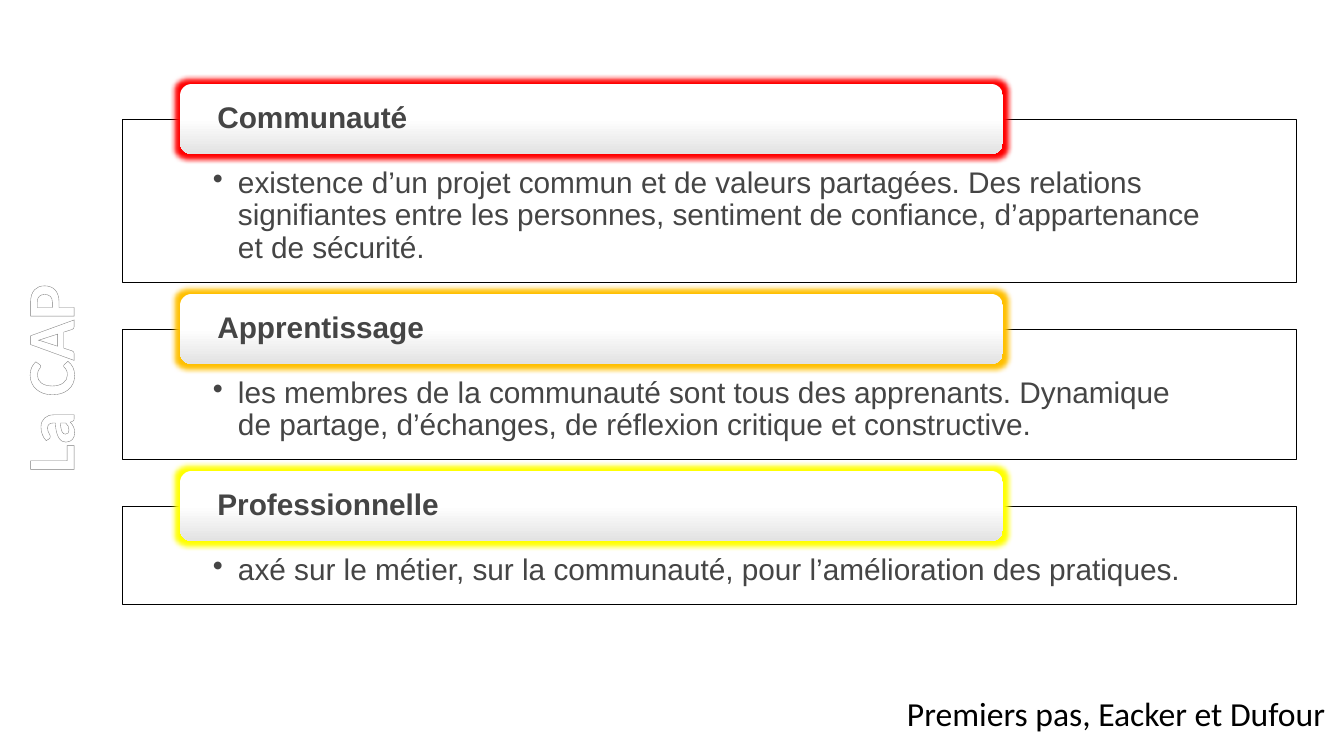
"""Build the slide on the three ideas behind a CAP."""
from lxml import etree
from pptx import Presentation
from pptx.dml.color import RGBColor
from pptx.enum.shapes import MSO_SHAPE
from pptx.enum.text import MSO_ANCHOR, MSO_AUTO_SIZE, PP_ALIGN
from pptx.oxml import parse_xml
from pptx.oxml.ns import qn
from pptx.util import Pt

RECTANGLE, ROUNDED = MSO_SHAPE.RECTANGLE, MSO_SHAPE.ROUNDED_RECTANGLE
TOP, MIDDLE = MSO_ANCHOR.TOP, MSO_ANCHOR.MIDDLE
LEFT, CENTER = PP_ALIGN.LEFT, PP_ALIGN.CENTER
GROW = MSO_AUTO_SIZE.SHAPE_TO_FIT_TEXT
NAMESPACE = "http://schemas.openxmlformats.org/drawingml/2006/main"
PX = 914400 / 100.8
COLORS = {
    "white": "FFFFFF", "black": "000000", "text": "454545", "shade": "E3E3E3",
    "gray": "7F7F7F", "outline": "7D7D7D",
    "red": "FF0000", "orange": "FFC000", "yellow": "FFFF00",
}
SECTIONS = [
    ("Communauté", "existence d’un projet commun et de valeurs partagées. Des relations "
     "signifiantes entre les personnes, sentiment de confiance, d’appartenance et de sécurité.",
     163, "red"),
    ("Apprentissage", "les membres de la communauté sont tous des apprenants. Dynamique "
     "de partage, d’échanges, de réflexion critique et constructive.", 130, "orange"),
    ("Professionnelle", "axé sur le métier, sur la communauté, pour l’amélioration des pratiques.",
     98, "yellow"),
]
FRAME_LEFT, FRAME_WIDTH, FRAME_GAP = 122, 1174, 47
TAB_LEFT, TAB_WIDTH, TAB_HEIGHT = 180, 823, 70


def apply_gradient(fill, parent, stops):
    """Give the parent element a vertical gradient."""
    fill.background()
    stop_xml = "".join(
        f'<a:gs pos="{position * 1000}"><a:srgbClr val="{COLORS[name]}"/></a:gs>'
        for position, name in stops)
    gradient = parse_xml(
        f'<a:gradFill xmlns:a="{NAMESPACE}" rotWithShape="1"><a:gsLst>{stop_xml}</a:gsLst>'
        '<a:lin ang="5400000" scaled="0"/></a:gradFill>')
    parent.replace(parent.find(qn("a:noFill")), gradient)


def write_text(shape, text, size, font_name, color, bold, alignment, anchor, insets):
    """Set the text of a shape and format its only run."""
    frame = shape.text_frame
    frame.text = text
    frame.word_wrap = True
    frame.vertical_anchor = anchor
    frame.margin_left = frame.margin_right = round(insets[0] * PX)
    frame.margin_top, frame.margin_bottom = (round(inset * PX) for inset in insets[1:])
    paragraph = frame.paragraphs[0]
    paragraph.alignment = alignment
    font = paragraph.runs[0].font
    font.size, font.name, font.bold = Pt(size), font_name, bold
    font.color.rgb = RGBColor.from_string(COLORS[color])
    return paragraph


presentation = Presentation()
presentation.slide_width, presentation.slide_height = round(1344 * PX), round(756 * PX)
slide = presentation.slides.add_slide(presentation.slide_layouts[5])

top = 119
for heading, description, height, glow_color in SECTIONS:
    box = slide.shapes.add_shape(
        RECTANGLE, *(round(length * PX) for length in (FRAME_LEFT, top, FRAME_WIDTH, height)))
    box.shadow.inherit = False
    box.fill.solid()
    box.fill.fore_color.rgb = RGBColor.from_string(COLORS["white"])
    box.line.color.rgb = RGBColor.from_string(COLORS["black"])
    box.line.width = Pt(0.5)
    paragraph = write_text(box, description, 21.3, "Arial", "text", False, LEFT, TOP, (91, 49, 17))
    paragraph.line_spacing = 0.9
    properties = paragraph._p.get_or_add_pPr()
    properties.set("marL", str(round(25 * PX)))
    properties.set("indent", str(round(-25 * PX)))
    etree.SubElement(properties, qn("a:buChar")).set("char", "•")

    tab = slide.shapes.add_shape(ROUNDED, *(
        round(length * PX) for length in (TAB_LEFT, top - TAB_HEIGHT // 2, TAB_WIDTH, TAB_HEIGHT)))
    tab.shadow.inherit = False
    tab.line.fill.background()
    shape_properties = tab._element.spPr
    apply_gradient(tab.fill, shape_properties, [(0, "white"), (50, "white"), (100, "shade")])
    glow = etree.SubElement(shape_properties.find(qn("a:effectLst")), qn("a:glow"))
    glow.set("rad", str(round(11 * PX)))
    etree.SubElement(glow, qn("a:srgbClr")).set("val", COLORS[glow_color])
    paragraph = write_text(tab, heading, 21.3, "Arial", "text", True, LEFT, MIDDLE, (34, 3, 3))
    paragraph.line_spacing = 0.9
    top += height + FRAME_GAP

title = slide.shapes.title
title.left, title.top, title.width, title.height = (
    round(length * PX) for length in (-330, 331, 755, 95))
title.rotation = 270
paragraph = write_text(title, "La CAP", 48, "Calibri", "white", True, CENTER, TOP, (13, 7, 7))
title.text_frame.auto_size = GROW
font = paragraph.runs[0].font
run_properties = paragraph.runs[0]._r.get_or_add_rPr()
apply_gradient(font.fill, run_properties, [
    (0, "white"), (9, "white"), (50, "gray"), (79, "white"), (100, "white")])
run_properties.insert(0, parse_xml(
    f'<a:ln xmlns:a="{NAMESPACE}" w="{Pt(0.83)}"><a:solidFill>'
    f'<a:srgbClr val="{COLORS["outline"]}"/></a:solidFill></a:ln>'))

credit = slide.shapes.add_textbox(*(round(length * PX) for length in (897, 688, 443, 50)))
write_text(credit, "Premiers pas, Eacker et Dufour", 24, "Calibri", "black", False, LEFT, TOP,
           (10, 5, 5))
credit.text_frame.word_wrap = False
credit.text_frame.auto_size = GROW

presentation.save("out.pptx")
